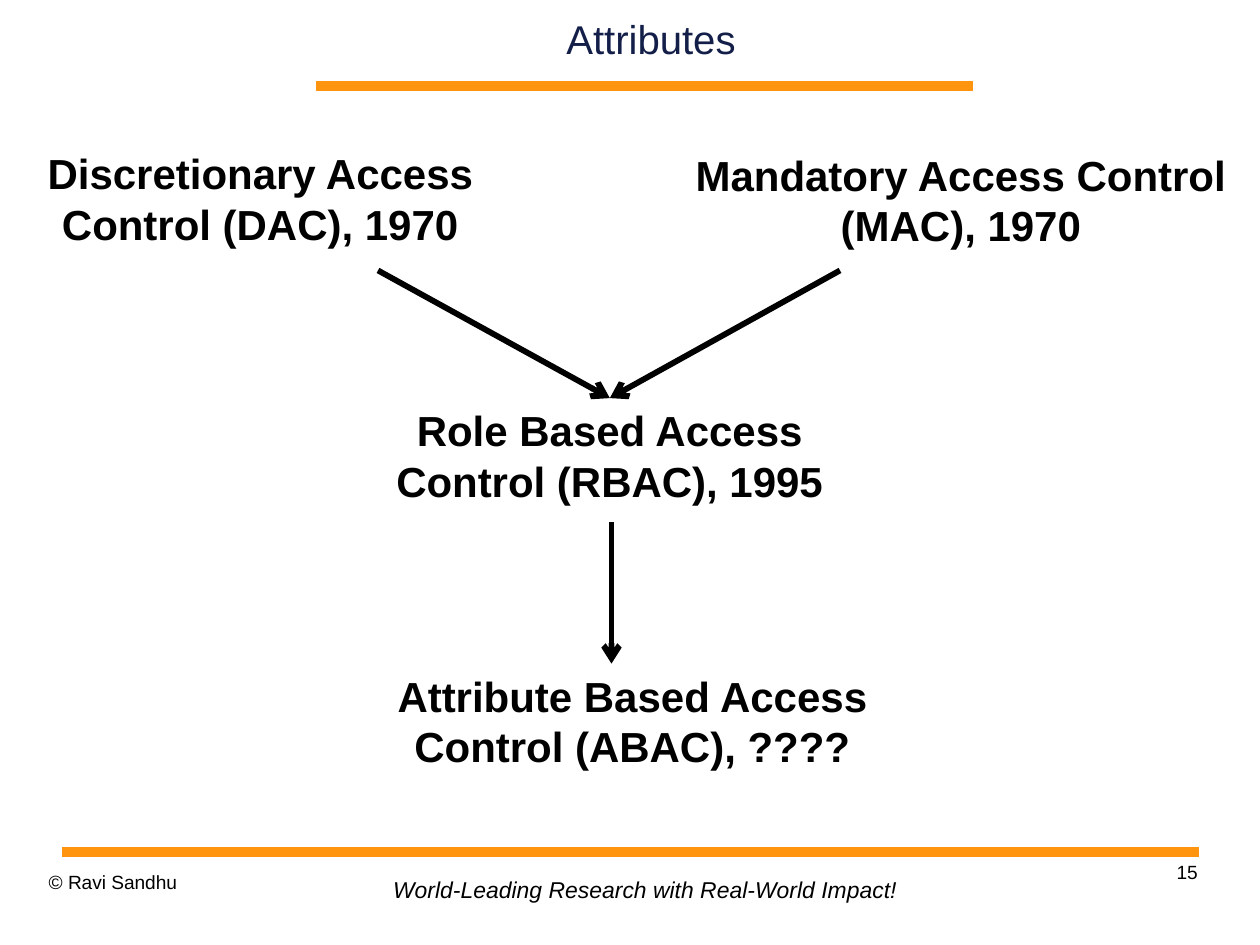
from lxml import etree
from pptx import Presentation
from pptx.dml.color import RGBColor
from pptx.enum import shapes, text
from pptx.oxml.ns import qn
from pptx.util import Inches, Pt

BLACK, NAVY, ORANGE = "000000", "131F49", "FF950E"
LEFT, CENTER, RIGHT = text.PP_ALIGN.LEFT, text.PP_ALIGN.CENTER, text.PP_ALIGN.RIGHT

SLIDE_WIDTH = 7.5
SLIDE_HEIGHT = SLIDE_WIDTH * 3 / 4
TITLE = "Attributes"
MODELS = {  # name: (text, left, top, width)
    "DAC": ("Discretionary Access Control (DAC), 1970", -0.13, 0.84, 3.36),
    "MAC": ("Mandatory Access Control (MAC), 1970", 4.04, 0.85, 3.36),
    "RBAC": ("Role Based Access Control (RBAC), 1995", 1.95, 2.37, 3.36),
    "ABAC": ("Attribute Based Access Control (ABAC), ????", 1.9, 3.95, 3.73),
}
MODEL_HEIGHT = 0.69
ARROWS = [  # start, end, model whose top the arrow joins
    ((2.25, 1.61), (3.63, 2.37), "RBAC"),
    ((5, 1.61), (3.63, 2.37), "RBAC"),
    ((3.64, 3.11), (3.64, 3.95), None),
]
RULES = [((1.88, 0.51), (5.79, 0.51)), ((0.37, 5.07), (7.14, 5.07))]
FOOTERS = [  # text, position and size, format
    ("15", (5.38, 5.12, 1.75, 0.39), dict(size=8.2, align=RIGHT)),
    ("© Ravi Sandhu", (0.29, 5.18, 1.75, 0.29), dict(size=8.2)),
    ("World-Leading Research with Real-World Impact!", (2.28, 5.18, 3.11, 0.23),
     dict(size=9.8, italic=True, margins=(0.06, 0.03), wrap=False)),
]


def rgb(value):
    return RGBColor.from_string(value)


def write(shape, words, size=18, color=BLACK, bold=False, italic=False, align=LEFT,
          anchor=text.MSO_ANCHOR.TOP, margins=(0, 0), wrap=True):
    frame = shape.text_frame
    frame.text = words
    frame.word_wrap = wrap
    frame.auto_size = text.MSO_AUTO_SIZE.NONE
    frame.vertical_anchor = anchor
    frame.margin_left = frame.margin_right = Inches(margins[0])
    frame.margin_top = frame.margin_bottom = Inches(margins[1])
    paragraph = frame.paragraphs[0]
    paragraph.alignment = align
    font = paragraph.runs[0].font
    font.name, font.size = "Arial", Pt(size)
    font.bold, font.italic = bold, italic
    font.color.rgb = rgb(color)


def add_text(slide, words, place, **style):
    box = slide.shapes.add_textbox(*map(Inches, place))
    write(box, words, **style)
    return box


def add_line(slide, start, end, color, width, arrow=False):
    line = slide.shapes.add_connector(
        shapes.MSO_CONNECTOR.STRAIGHT, *map(Inches, start + end))
    line.line.color.rgb = rgb(color)
    line.line.width = Pt(width)
    if arrow:
        etree.SubElement(line.line._get_or_add_ln(), qn("a:tailEnd"), type="arrow")
    etree.SubElement(line._element.spPr, qn("a:effectLst"))
    return line


def main():
    deck = Presentation()
    deck.slide_width, deck.slide_height = Inches(SLIDE_WIDTH), Inches(SLIDE_HEIGHT)
    slide = deck.slides.add_slide(deck.slide_layouts[5])

    for start, end in RULES:
        add_line(slide, start, end, ORANGE, 4.31)

    title = slide.shapes.title
    title.left, title.top = Inches(1.94), Inches(0.04)
    title.width, title.height = Inches(3.87), Inches(0.38)
    write(title, TITLE, size=17.2, color=NAVY, align=CENTER,
          anchor=text.MSO_ANCHOR.MIDDLE)

    models = {
        name: add_text(slide, words, (left, top, width, MODEL_HEIGHT),
                       bold=True, align=CENTER, margins=(0.08, 0.04))
        for name, (words, left, top, width) in MODELS.items()
    }
    for start, end, target in ARROWS:
        arrow = add_line(slide, start, end, BLACK, 2.5, arrow=True)
        if target:
            arrow.end_connect(models[target], 0)

    for words, place, style in FOOTERS:
        add_text(slide, words, place, **style)

    deck.save("out.pptx")


if __name__ == "__main__":
    main()
